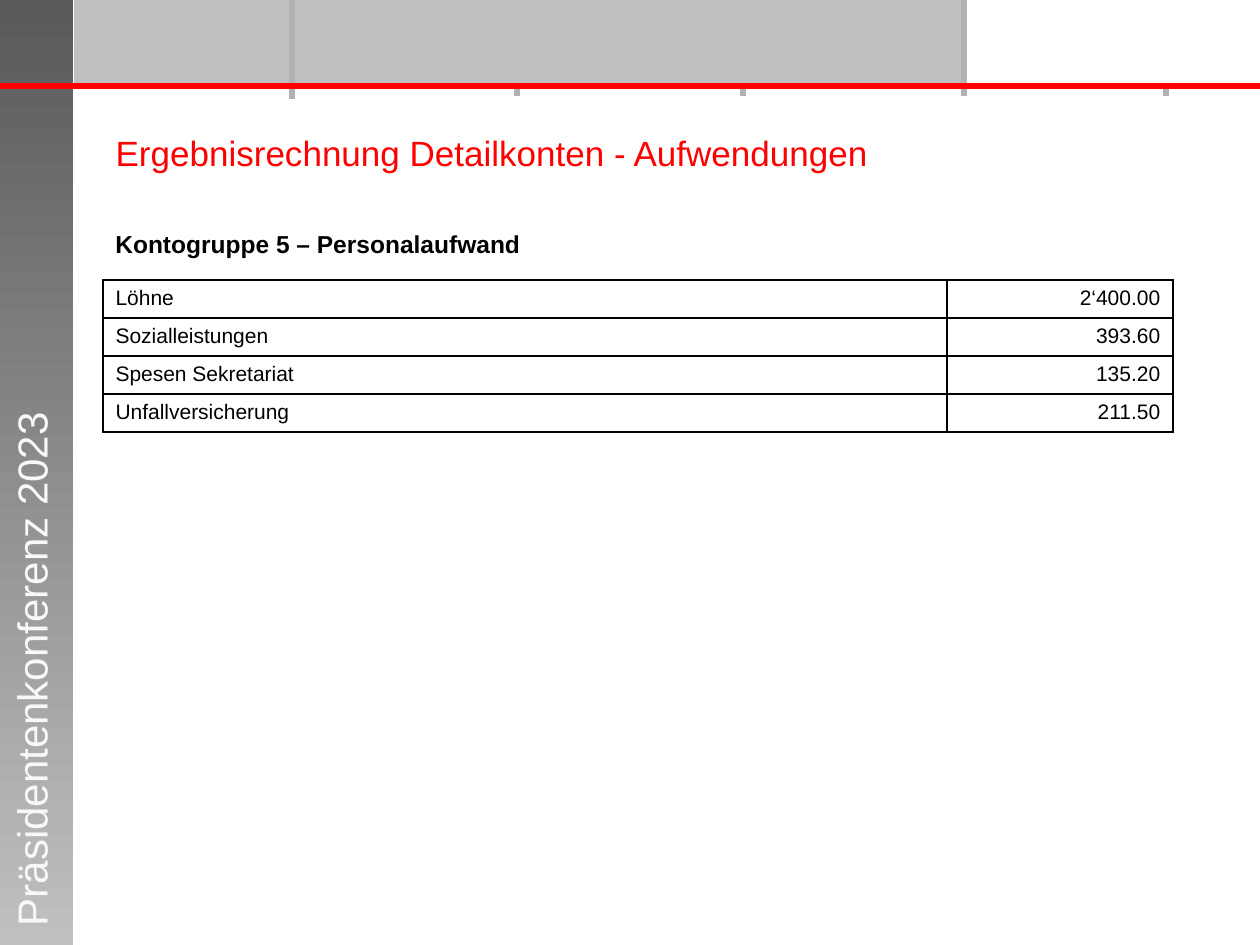
from lxml.etree import SubElement
from pptx import Presentation
from pptx.dml.color import RGBColor
from pptx.enum.shapes import MSO_CONNECTOR, MSO_SHAPE
from pptx.enum.text import MSO_ANCHOR, PP_ALIGN
from pptx.oxml import parse_xml
from pptx.oxml.ns import nsdecls, qn
from pptx.util import Pt

PX = 914400 // 126
W, H = 1260, 945
COLORS = {"red": "FF0000", "black": "000000", "white": "FFFFFF", "offwhite": "F8F8F8",
          "dark": "595959", "grey": "C0C0C0", "tick": "B2B2B2"}

TITLE = "Ergebnisrechnung Detailkonten - Aufwendungen"
SUBTITLE = "Kontogruppe 5 – Personalaufwand"
SIDEBAR = "Präsidentenkonferenz 2023"
ACCOUNTS = [("Löhne", "2‘400.00"),
            ("Sozialleistungen", "393.60"),
            ("Spesen Sekretariat", "135.20"),
            ("Unfallversicherung", "211.50")]

SIDE_W = 73
RULE_Y = 86
TICKS_BEHIND = [(743, 0, 96), (517, 0, 96)]  # x, top, bottom
TICKS_FRONT = [(292, 0, 99), (964, 0, 96), (1166, RULE_Y, 96)]
LEFT, TABLE_TOP, ROW_H = 103, 280, 38
COL_WIDTHS = [844, 226]


def rgb(name):
    return RGBColor.from_string(COLORS[name])


def px(*values):
    return [v * PX for v in values]


def add_line(s, x1, y1, x2, y2, color):
    line = s.shapes.add_connector(MSO_CONNECTOR.STRAIGHT, *px(x1, y1, x2, y2))
    line.line.color.rgb = rgb(color)
    line.line.width = Pt(3)
    SubElement(line._element.spPr, qn("a:effectLst"))


def add_rect(s, *box):
    sp = s.shapes.add_shape(MSO_SHAPE.RECTANGLE, *px(*box))
    sp.shadow.inherit = False
    sp.line.fill.background()
    return sp


def write(tf, text, size, color, bold=False, align=PP_ALIGN.LEFT):
    tf.word_wrap = True
    p = tf.paragraphs[0]
    p.alignment = align
    r = p.add_run()
    r.text = text
    for name, value in {"name": "Arial", "size": Pt(size), "bold": bold}.items():
        setattr(r.font, name, value)
    r.font.color.rgb = rgb(color)


def add_borders(cell):
    tc_pr = cell._tc.get_or_add_tcPr()
    for i, side in enumerate("LRTB"):
        tc_pr.insert(i, parse_xml(
            f'<a:ln{side} {nsdecls("a")} w="12700"><a:solidFill>'
            f'<a:srgbClr val="{COLORS["black"]}"/></a:solidFill></a:ln{side}>'))


def add_frame(s):
    for x, top, bottom in TICKS_BEHIND:
        add_line(s, x, top, x, bottom, "tick")
    fill = add_rect(s, 0, 0, SIDE_W, H).fill
    fill.gradient()
    fill.gradient_angle = 270
    for stop, position, color in zip(fill.gradient_stops, (0, 1), ("dark", "grey")):
        stop.position = position
        stop.color.rgb = rgb(color)
    banner = add_rect(s, SIDE_W + 1, 0, 893, RULE_Y)
    banner.fill.solid()
    banner.fill.fore_color.rgb = rgb("grey")
    for x, top, bottom in TICKS_FRONT:
        add_line(s, x, top, x, bottom, "tick")
    add_line(s, 0, RULE_Y, W, RULE_Y, "red")

    label = s.shapes.add_textbox(*px(-242, 634, 546, 63))
    label.rotation = 270
    write(label.text_frame, SIDEBAR, 24, "offwhite")


def add_accounts(s):
    table = s.shapes.add_table(len(ACCOUNTS), len(COL_WIDTHS), *px(
        LEFT, TABLE_TOP, sum(COL_WIDTHS), ROW_H * len(ACCOUNTS))).table
    for col, width in zip(table.columns, COL_WIDTHS):
        col.width = width * PX
    for i, account in enumerate(ACCOUNTS):
        for j, (text, align) in enumerate(zip(account, (PP_ALIGN.LEFT, PP_ALIGN.RIGHT))):
            cell = table.cell(i, j)
            cell.fill.solid()
            cell.fill.fore_color.rgb = rgb("white")
            write(cell.text_frame, text, 12, "black", align=align)
            add_borders(cell)


def main():
    prs = Presentation()
    prs.slide_width, prs.slide_height = px(W, H)
    s = prs.slides.add_slide(prs.slide_layouts[5])
    add_frame(s)

    title = s.shapes.title
    title.left, title.top, title.width, title.height = px(LEFT, 125, 1084, 56)
    title.text_frame.vertical_anchor = MSO_ANCHOR.TOP
    write(title.text_frame, TITLE, 20, "red")

    subtitle = s.shapes.add_textbox(*px(LEFT, 223, 1084, 40))
    write(subtitle.text_frame, SUBTITLE, 14, "black", bold=True)
    add_accounts(s)
    prs.save("out.pptx")


if __name__ == "__main__":
    main()
